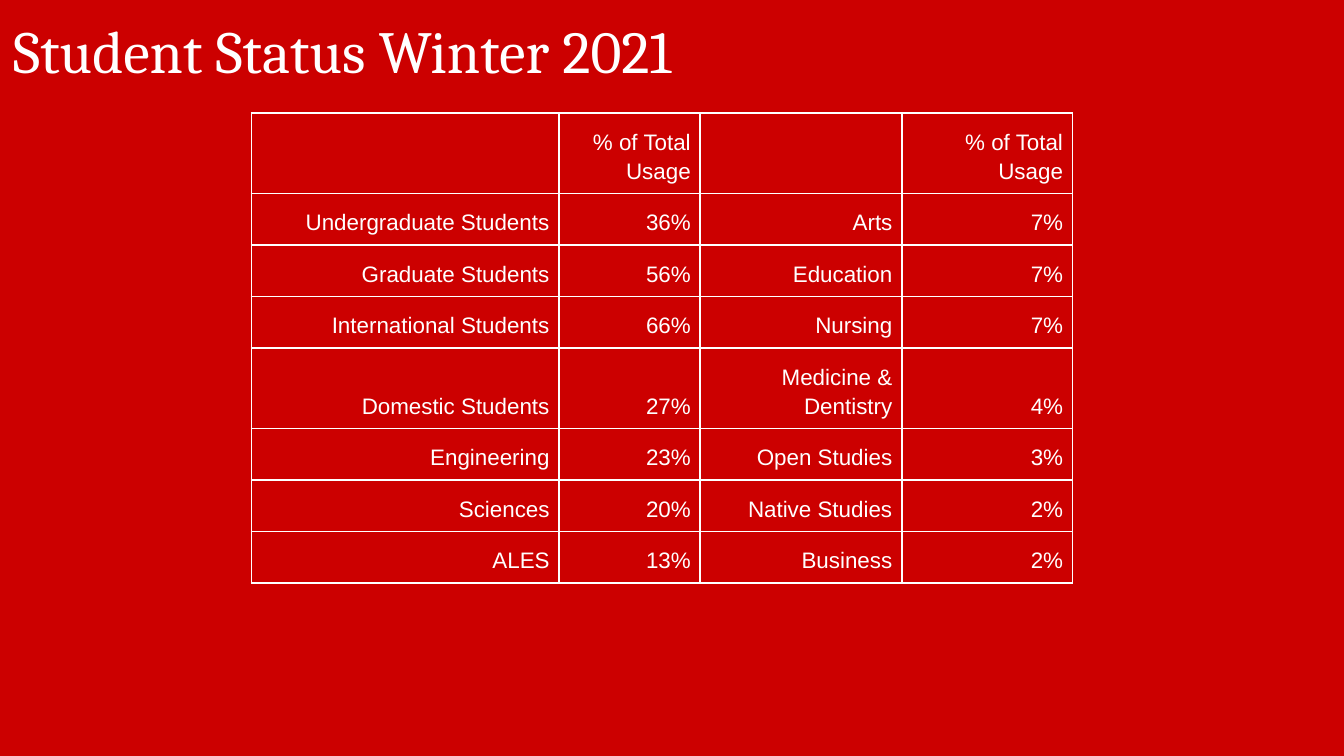
from lxml.etree import SubElement
from pptx import Presentation
from pptx.dml.color import RGBColor
from pptx.enum.text import MSO_ANCHOR, PP_ALIGN
from pptx.oxml.ns import qn
from pptx.util import Inches, Pt

RED = "CC0000"
WHITE = "FFFFFF"

COLUMN_WIDTHS = [2.29, 1.05, 1.5, 1.27]
ROW_HEIGHT = Pt(27.6)
USAGE_ROWS = [
    ["", "% of Total Usage", "", "% of Total Usage"],
    ["Undergraduate Students", "36%", "Arts", "7%"],
    ["Graduate Students", "56%", "Education", "7%"],
    ["International Students", "66%", "Nursing", "7%"],
    ["Domestic Students", "27%", "Medicine & Dentistry", "4%"],
    ["Engineering", "23%", "Open Studies", "3%"],
    ["Sciences", "20%", "Native Studies", "2%"],
    ["ALES", "13%", "Business", "2%"],
]


def color(hex_string):
    return RGBColor.from_string(hex_string)


def format_font(font, name, size):
    font.name = name
    font.size = Pt(size)
    font.color.rgb = color(WHITE)


def add_title(slide, left, top, width, height):
    box = slide.shapes.add_textbox(Inches(left), Inches(top), Inches(width), Inches(height))
    frame = box.text_frame
    frame.word_wrap = True
    frame.margin_left = frame.margin_right = Inches(0.1)
    frame.margin_top = frame.margin_bottom = Inches(0.1)
    frame.text = "Student Status Winter 2021"
    format_font(frame.paragraphs[0].runs[0].font, "Cambria", 32)


def add_borders(cell, hex_string, width):
    properties = cell._tc.get_or_add_tcPr()
    for side in ("a:lnL", "a:lnR", "a:lnT", "a:lnB"):
        line = SubElement(properties, qn(side), w=str(Pt(width)))
        fill = SubElement(line, qn("a:solidFill"))
        SubElement(fill, qn("a:srgbClr"), val=hex_string)


def format_cell(cell, text):
    add_borders(cell, WHITE, 1)
    cell.fill.background()
    cell.vertical_anchor = MSO_ANCHOR.BOTTOM
    cell.margin_left = cell.margin_right = Inches(0.07)
    cell.margin_top = cell.margin_bottom = Inches(0.07)
    if not text:
        return
    cell.text_frame.text = text
    paragraph = cell.text_frame.paragraphs[0]
    paragraph.alignment = PP_ALIGN.RIGHT
    paragraph.line_spacing = 1.15
    paragraph.space_before = paragraph.space_after = Pt(0)
    format_font(paragraph.runs[0].font, "Arial", 12)


def add_usage_table(slide, left, top):
    frame = slide.shapes.add_table(
        len(USAGE_ROWS), len(COLUMN_WIDTHS), Inches(left), Inches(top),
        Inches(sum(COLUMN_WIDTHS)), ROW_HEIGHT * len(USAGE_ROWS))
    table = frame.table
    table.first_row = table.horz_banding = False
    for column, width in zip(table.columns, COLUMN_WIDTHS):
        column.width = Inches(width)
    for row, texts in zip(table.rows, USAGE_ROWS):
        row.height = ROW_HEIGHT
        for cell, text in zip(row.cells, texts):
            format_cell(cell, text)


def main():
    presentation = Presentation()
    presentation.slide_width = Inches(10)
    presentation.slide_height = Inches(10 * 9 / 16)
    slide = presentation.slides.add_slide(presentation.slide_layouts[6])
    slide.background.fill.solid()
    slide.background.fill.fore_color.rgb = color(RED)
    add_title(slide, 0, 0, 6.18, 1.12)
    add_usage_table(slide, 1.87, 0.84)
    presentation.save("out.pptx")


if __name__ == "__main__":
    main()
